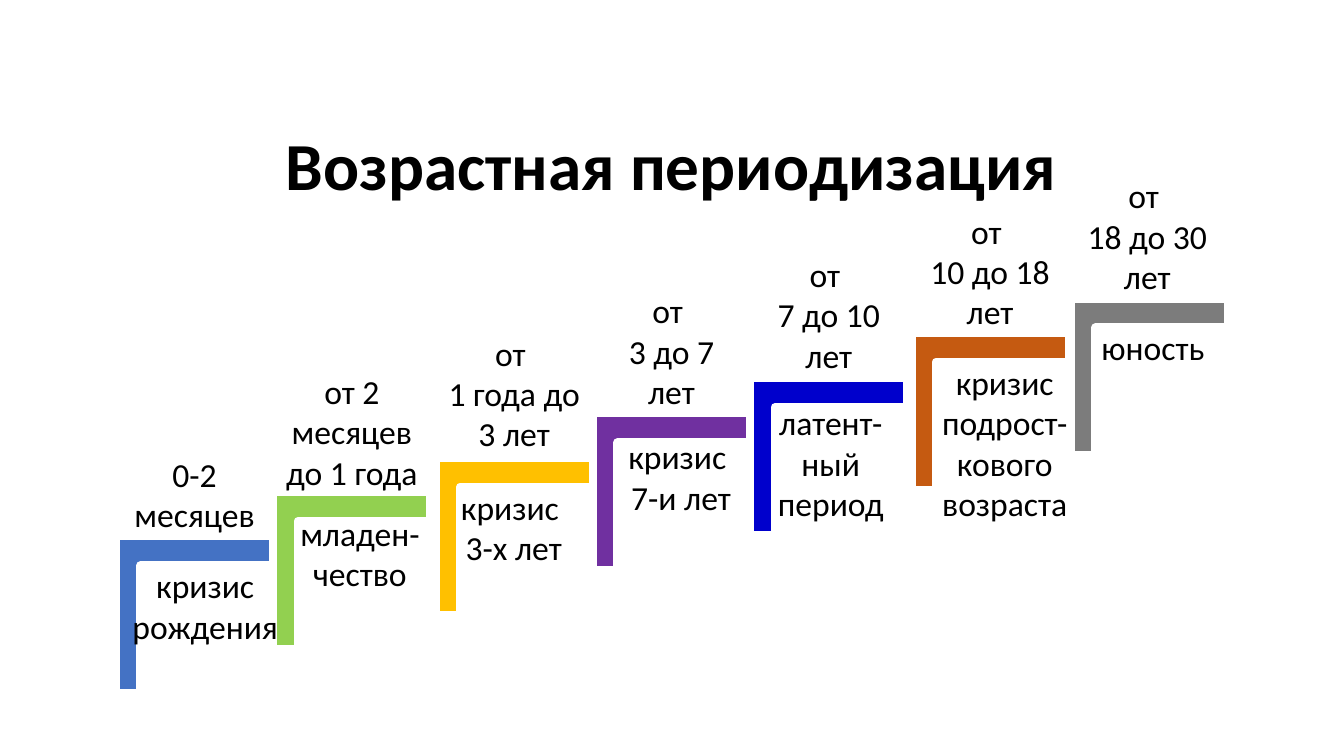
from pptx import Presentation
from pptx.dml.color import RGBColor
from pptx.enum.shapes import MSO_SHAPE as SHAPE
from pptx.enum.text import MSO_ANCHOR as ANCHOR, MSO_AUTO_SIZE as AUTO, PP_ALIGN as ALIGN
from pptx.util import Inches, Pt

COLORS = {
    "text": "000000", "edge": "FFFFFF",
    "blue": "4472C4", "green": "92D050", "amber": "FFC000", "purple": "7030A0",
    "navy": "0000CC", "rust": "C55A11", "gray": "7C7C7C",
}
STEP = 1.56
LINE = 0.4
PADDING = 0.1

STAGES = [
    ("blue", (1.15, 5.32), ["0-2 месяцев"], (1.15, 4.45), 2,
     ["кризис рождения"], (1.21, 5.56, 1.65), 2),
    ("green", (2.71, 4.88), ["от 2 месяцев до 1 года"], (2.71, 3.63), 3,
     ["младен-чество"], (2.79, 5.04, STEP), 2),
    ("amber", (4.32, 4.54), ["от ", "1 года до 3 лет"], (4.32, 3.25), 3,
     ["кризис ", "3-х лет"], (4.27, 4.78, 1.65), 2),
    ("purple", (5.88, 4.1), ["от ", "3 до 7 лет"], (5.88, 2.83), 3,
     ["кризис ", "7-и лет"], (5.93, 4.28, 1.65), 2),
    ("navy", (7.44, 3.75), ["от ", "7 до 10 лет"], (7.44, 2.47), 3,
     ["латент-ный период"], (7.46, 3.94, STEP), 3),
    ("rust", (9.04, 3.3), ["от ", "10 до 18 лет"], (9.04, 2.04), 3,
     ["кризис подрост-кового возраста"], (9.14, 3.54, 1.65), 4),
    ("gray", (10.62, 2.96), ["от ", "18 до 30 лет"], (10.6, 1.69), 3,
     ["юность"], (10.61, 3.19, 1.65), 1),
]


class Deck:
    font = "Calibri"

    def __init__(self):
        self.prs = Presentation()
        self.prs.slide_width = Inches(13.33)
        self.prs.slide_height = Inches(7.5)
        self.s = self.prs.slides.add_slide(self.prs.slide_layouts[6])

    def color(self, name):
        return RGBColor.from_string(COLORS[name])

    def text(self, lines, x, y, w, h, size=24, bold=False, anchor=ANCHOR.TOP, auto=AUTO.NONE):
        tf = self.s.shapes.add_textbox(Inches(x), Inches(y), Inches(w), Inches(h)).text_frame
        tf.word_wrap = True
        tf.auto_size = auto
        tf.vertical_anchor = anchor
        for i, line in enumerate(lines):
            p = tf.add_paragraph() if i else tf.paragraphs[0]
            p.text = line
            p.alignment = ALIGN.CENTER
            p.font.name = self.font
            p.font.size = Pt(size)
            p.font.bold = bold
            p.font.color.rgb = self.color("text")

    def label(self, lines, x, y, w, rows):
        self.text(lines, x, y, w, rows * LINE + PADDING, auto=AUTO.SHAPE_TO_FIT_TEXT)

    def corner(self, color, x, y):
        sp = self.s.shapes.add_shape(SHAPE.CORNER, Inches(x), Inches(y), Inches(STEP), Inches(STEP))
        sp.rotation = 90
        sp.adjustments[0] = 0.156
        sp.adjustments[1] = 0.187
        sp.shadow.inherit = False
        sp.fill.solid()
        sp.fill.fore_color.rgb = self.color(color)
        sp.line.color.rgb = self.color("edge")
        sp.line.width = Pt(6)


def main():
    deck = Deck()
    deck.text(["Возрастная периодизация"], 2.06, 1, 9.2, 1.25, size=48, bold=True, anchor=ANCHOR.MIDDLE)
    for color, corner, *_ in STAGES:
        deck.corner(color, *corner)
    for _, _, age, age_at, age_rows, stage, stage_at, stage_rows in STAGES:
        deck.label(age, *age_at, STEP, age_rows)
        deck.label(stage, *stage_at, stage_rows)
    deck.prs.save("out.pptx")


if __name__ == "__main__":
    main()
